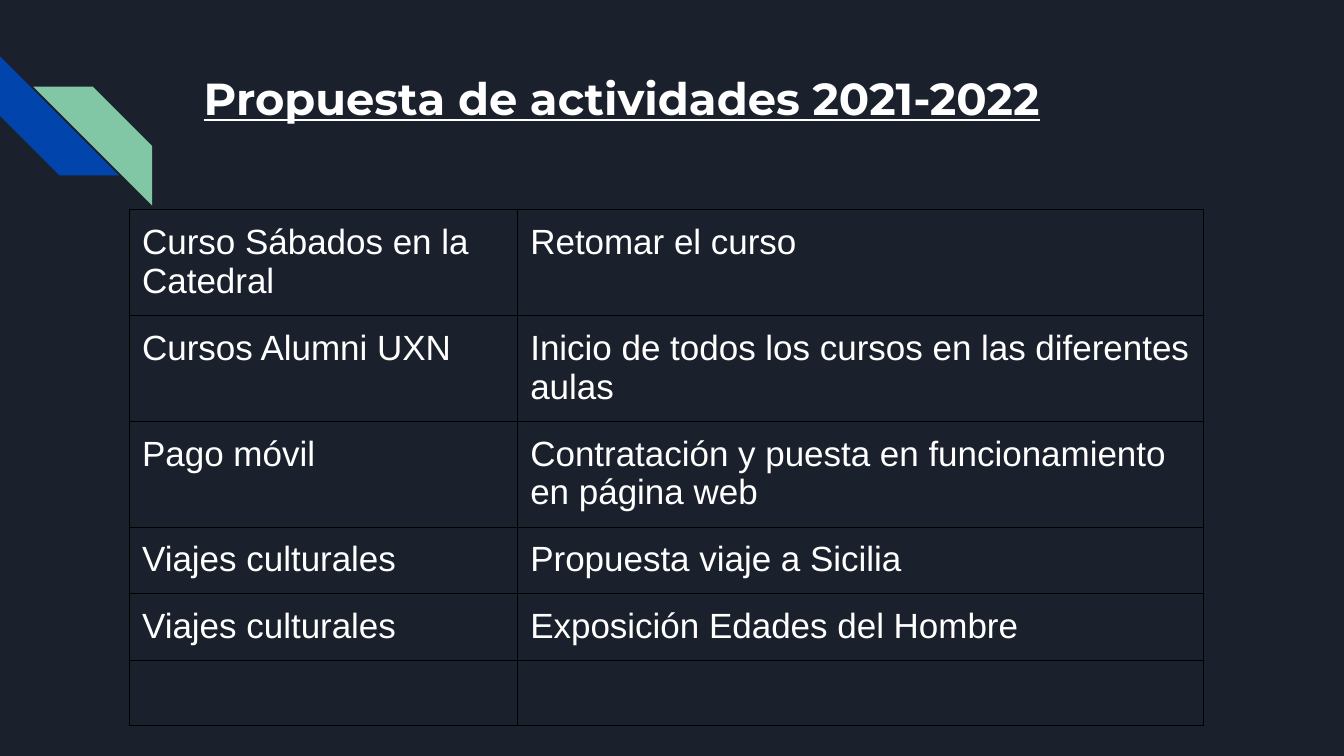
from lxml import etree
from pptx import Presentation
from pptx import util as u
from pptx.dml.color import RGBColor
from pptx.enum import shapes, text
from pptx.oxml.ns import qn


def paint(fill, color):
    fill.solid()
    fill.fore_color.rgb = RGBColor.from_string(color)


def draw_borders(cell, color, width):
    properties = cell._tc.get_or_add_tcPr()
    for position, side in enumerate(("lnL", "lnR", "lnT", "lnB")):
        line = etree.Element(qn(f"a:{side}"), w=str(u.Pt(width)))
        solid = etree.SubElement(line, qn("a:solidFill"))
        etree.SubElement(solid, qn("a:srgbClr"), val=color)
        properties.insert(position, line)


BACKGROUND, WHITE, BLACK = "1B212C", "FFFFFF", "000000"
INSET = u.Inches(0.13)

deck = Presentation()
deck.slide_width, deck.slide_height = u.Inches(13.33), u.Inches(7.5)
page = deck.slides.add_slide(deck.slide_layouts[5])
paint(page.background.fill, BACKGROUND)

# Diagonal stripes in the corner
for left, top, rotation, color in ((0, 0.56, 270, "0145AC"), (0.33, 0.86, 90, "82C7A5")):
    stripe = page.shapes.add_shape(
        shapes.MSO_SHAPE.DIAGONAL_STRIPE,
        u.Inches(left), u.Inches(top), u.Inches(1.18), u.Inches(1.18))
    stripe.rotation = rotation
    stripe.shadow.inherit = False
    paint(stripe.fill, color)
    stripe.line.fill.background()

# Title
title = page.shapes.title
title.left, title.top = u.Inches(1.89), u.Inches(0.57)
title.width, title.height = u.Inches(10.26), u.Inches(1.33)
frame = title.text_frame
frame.text = "Propuesta de actividades 2021-2022"
frame.word_wrap = True
frame.auto_size = text.MSO_AUTO_SIZE.NONE
frame.vertical_anchor = text.MSO_ANCHOR.TOP
frame.margin_left = frame.margin_right = frame.margin_top = frame.margin_bottom = INSET
para = frame.paragraphs[0]
para.alignment = text.PP_ALIGN.LEFT
span = para.runs[0]
span.font.name, span.font.size = "Montserrat", u.Pt(32)
span.font.bold = span.font.underline = True
paint(span.font.fill, WHITE)

# Table of activities
activities = [
    ("Curso Sábados en la Catedral", "Retomar el curso"),
    ("Cursos Alumni UXN", "Inicio de todos los cursos en las diferentes aulas"),
    ("Pago móvil", "Contratación y puesta en funcionamiento en página web"),
    ("Viajes culturales", "Propuesta viaje a Sicilia"),
    ("Viajes culturales", "Exposición Edades del Hombre"),
    ("", ""),
]
column_widths = (3.85, 6.81)
row_heights = (1.05, 1.05, 1.05, 0.66, 0.66, 0.65)
table = page.shapes.add_table(
    len(activities), len(column_widths), u.Inches(1.28), u.Inches(2.08),
    u.Inches(sum(column_widths)), u.Inches(sum(row_heights))).table
table.first_row = table.horz_banding = False
for column, width in zip(table.columns, column_widths):
    column.width = u.Inches(width)
for row, height, entries in zip(table.rows, row_heights, activities):
    row.height = u.Inches(height)
    for cell, entry in zip(row.cells, entries):
        cell.fill.background()
        draw_borders(cell, BLACK, 0.75)
        cell.margin_left = cell.margin_right = INSET
        cell.margin_top = cell.margin_bottom = INSET
        if entry:
            cell.text = entry
            span = cell.text_frame.paragraphs[0].runs[0]
            span.font.name, span.font.size = "Arial", u.Pt(25)
            paint(span.font.fill, WHITE)

deck.save("out.pptx")
